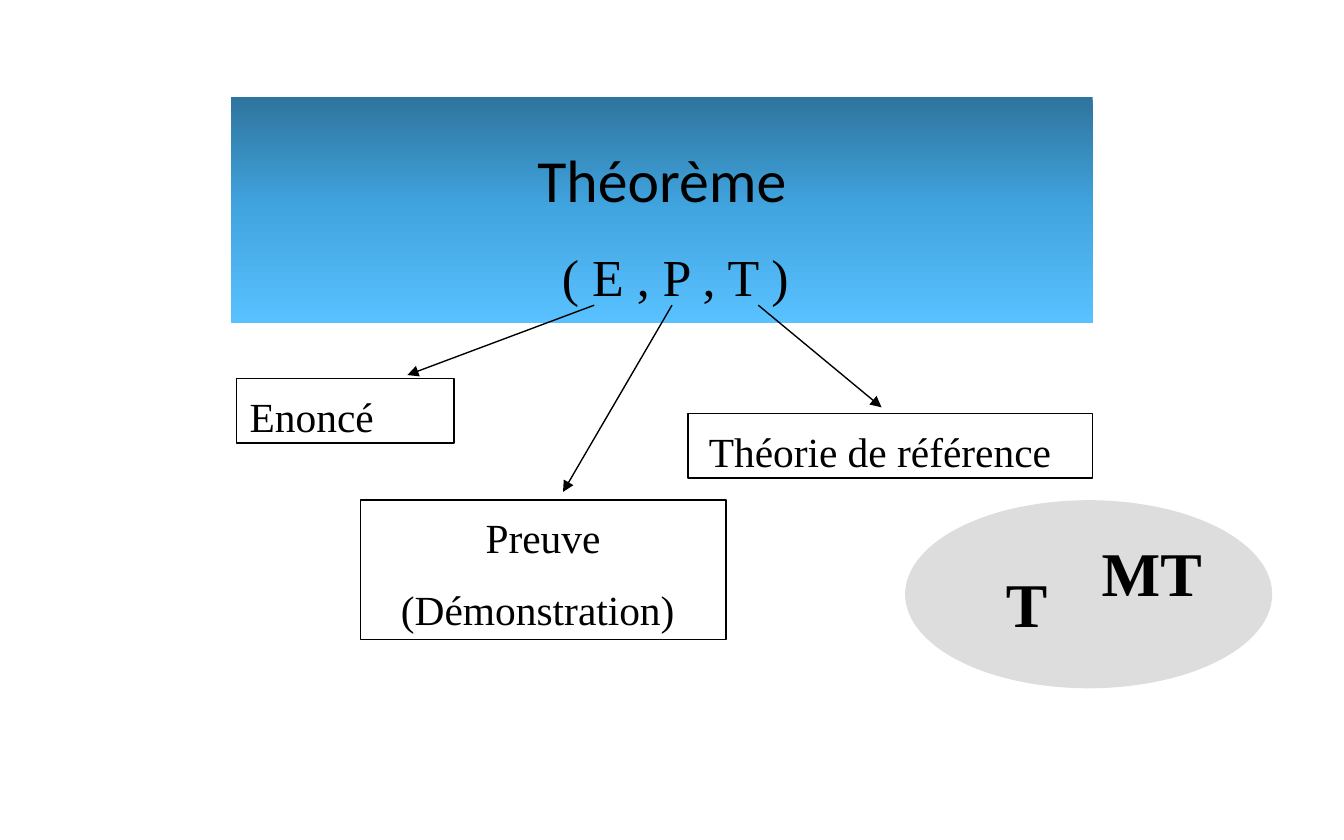
"""Build the slide that splits a theorem into statement, proof and reference theory."""
from copy import deepcopy

from lxml.etree import SubElement
from pptx import Presentation
from pptx.dml.color import RGBColor
from pptx.enum.shapes import MSO_CONNECTOR as CONNECTOR, MSO_SHAPE as SHAPE
from pptx.enum.text import MSO_ANCHOR as ANCHOR, PP_ALIGN as ALIGN
from pptx.oxml.ns import qn
from pptx.util import Cm, Pt

SERIF = "Times New Roman"


def color(hex_code):
    return RGBColor.from_string(hex_code)


def write(shape, lines, size, align, bold=False):
    frame = shape.text_frame
    frame.word_wrap = True
    frame.vertical_anchor = ANCHOR.TOP
    frame.margin_top = Cm(0.23)
    frame.text = "\n".join(lines)
    for index, paragraph in enumerate(frame.paragraphs):
        paragraph.alignment = align
        paragraph.space_before = Pt(12 if index else 0)
        font = paragraph.font
        font.name, font.size, font.bold = SERIF, Pt(size), bold
        font.color.rgb = color("000000")


prs = Presentation()
prs.slide_width, prs.slide_height = Cm(25.4), Cm(15.88)
slide = prs.slides.add_slide(prs.slide_layouts[5])
shapes = slide.shapes

title = shapes.title
title.left, title.top, title.width, title.height = Cm(4.37), Cm(1.83), Cm(16.28), Cm(4.27)
title.fill.gradient()
title.fill.gradient_angle = 270
stop_list = title.fill._xPr.find(qn("a:gradFill")).find(qn("a:gsLst"))
stop_list.append(deepcopy(stop_list[0]))
stops = [(0, "2E749E"), (0.5, "41A5E0"), (1, "59C1FF")]
for stop, (position, shade) in zip(title.fill.gradient_stops, stops):
    stop.position = position
    stop.color.rgb = color(shade)
title.text_frame.vertical_anchor = ANCHOR.MIDDLE
heading = title.text_frame.paragraphs[0]
heading.alignment = ALIGN.CENTER
heading.font.name = "Calibri"
heading.font.color.rgb = color("000000")
for text, size in [("Théorème", 32), (" ", 27.8)]:
    run = heading.add_run()
    run.text = text
    run.font.size = Pt(size)
    if text == "Théorème":
        heading.add_line_break()

triplet = shapes.add_textbox(Cm(4.98), Cm(4.45), Cm(15.57), Cm(1.35))
write(triplet, ["( E , P , T )"], 27.8, ALIGN.CENTER)
triplet.text_frame.margin_top = Cm(0.18)

components = [
    (["Enoncé"], 4.47, 7.16, 4.11, 1.22, ALIGN.LEFT),
    (["Preuve", "(Démonstration) "], 6.81, 9.45, 6.91, 2.64, ALIGN.CENTER),
    ([" Théorie de référence"], 13, 7.82, 7.65, 1.22, ALIGN.LEFT),
]
for lines, left, top, width, height, align in components:
    box = shapes.add_shape(SHAPE.RECTANGLE, Cm(left), Cm(top), Cm(width), Cm(height))
    box.shadow.inherit = False
    box.fill.background()
    box.line.color.rgb = color("000000")
    box.line.width = Pt(0.75)
    write(box, lines, 22.2, align)
    if lines[0].startswith(" "):
        space = box.text_frame.paragraphs[0].runs[0]
        space.text = " "
        space.font.size = Pt(16.7)
        box.text_frame.paragraphs[0].add_run().text = lines[0].strip()

arrow_top = 5.77
for start_x, end_x, end_y in [(11.23, 7.7, 7.09), (12.7, 10.64, 9.3), (14.33, 16.66, 7.7)]:
    arrow = shapes.add_connector(CONNECTOR.STRAIGHT, Cm(start_x), Cm(arrow_top), Cm(end_x), Cm(end_y))
    arrow.line.color.rgb = color("000000")
    arrow.line.width = Pt(0.75)
    SubElement(arrow.line._get_or_add_ln(), qn("a:tailEnd"), type="triangle")
    SubElement(arrow._element.spPr, qn("a:effectLst"))

theory = shapes.add_shape(SHAPE.OVAL, Cm(17.12), Cm(9.47), Cm(6.91), Cm(3.53))
theory.shadow.inherit = False
theory.fill.solid()
theory.fill.fore_color.rgb = color("DDDDDD")
theory.line.color.rgb = color("DDDDDD")
theory.line.width = Pt(0.75)

for text, left, top, width, height in [("MT", 20.57, 9.88, 3.61, 1.68), (" T", 18.49, 10.46, 1.63, 1.09)]:
    label = shapes.add_textbox(Cm(left), Cm(top), Cm(width), Cm(height))
    write(label, [text], 33.3, ALIGN.LEFT, bold=True)

prs.save("out.pptx")
